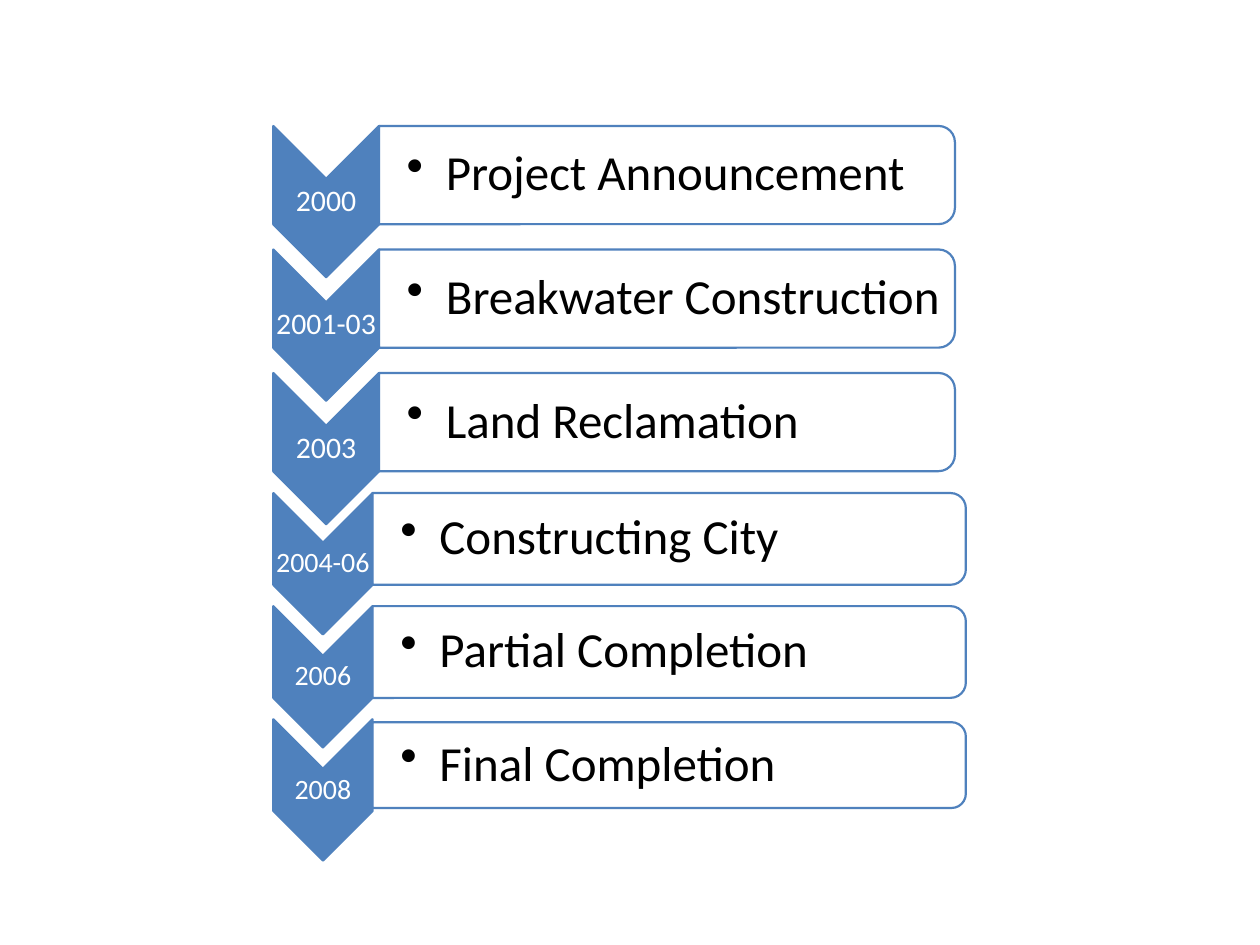
from lxml import etree
from pptx import Presentation
from pptx.dml.color import RGBColor
from pptx.enum import shapes, text
from pptx.oxml import ns
from pptx.util import Cm, Pt

BLUE, WHITE, BLACK = "4F81BD", "FFFFFF", "000000"
FONT = "Calibri"
LEFT = 5.51

# Lengths in cm, year size in points; each step is (year, label, bar height)
TIMELINES = [
    dict(top=2.54, pitch=2.49, arrow=(2.13, 3.05), bar_width=11.61, band=1.98, year_size=17,
         steps=[("2000", "Project Announcement", 1.98),
                ("2001-03", "Breakwater Construction", 1.98),
                ("2003", "Land Reclamation", 1.98)]),
    dict(top=9.94, pitch=2.28, arrow=(2.0, 2.85), bar_width=11.96, band=1.85, year_size=16,
         steps=[("2004-06", "Constructing City", 1.85),
                ("2006", "Partial Completion", 1.85),
                ("2008", "Final Completion", 1.73)]),
]


def rgb(value):
    return RGBColor.from_string(value)


def add_turned_shape(group, kind, left, top, width, height, fill):
    """Add a shape turned a quarter clockwise; the frame given is the one it shows."""
    shape = group.shapes.add_shape(
        kind, Cm(left + (width - height) / 2), Cm(top + (height - width) / 2),
        Cm(height), Cm(width))
    shape.rotation = 90
    shape.shadow.inherit = False
    shape.fill.solid()
    shape.fill.fore_color.rgb = rgb(fill)
    shape.line.color.rgb = rgb(BLUE)
    shape.line.width = Pt(1.25)
    return shape


def set_opacity(shape, percent):
    color = shape._element.spPr.find(ns.qn("a:solidFill"))[0]
    etree.SubElement(color, ns.qn("a:alpha"), val=str(percent * 1000))


def add_bullet(para, indent):
    props = para._p.get_or_add_pPr()
    props.set("marL", str(Cm(indent)))
    props.set("indent", str(-Cm(indent)))
    etree.SubElement(props, ns.qn("a:buChar"), char="•")


def add_text(group, words, frame, inset, left_inset, size, color, bulleted=False):
    box = group.shapes.add_textbox(*map(Cm, frame))
    body = box.text_frame
    body.word_wrap = True
    body.vertical_anchor = text.MSO_ANCHOR.MIDDLE
    body.margin_top = body.margin_right = body.margin_bottom = Cm(inset)
    body.margin_left = Cm(left_inset)
    body.text = words
    para = body.paragraphs[0]
    para.line_spacing = 0.9
    if bulleted:
        add_bullet(para, 0.79)
    else:
        para.alignment = text.PP_ALIGN.CENTER
    font = para.runs[0].font
    font.name, font.size, font.color.rgb = FONT, Pt(size), rgb(color)


def add_timeline(page, timeline):
    group = page.shapes.add_group_shape()
    arrow_width, arrow_height = timeline["arrow"]
    bar_left, bar_width = LEFT + arrow_width, timeline["bar_width"]
    for index, (year, label, bar_height) in enumerate(timeline["steps"]):
        top = timeline["top"] + index * timeline["pitch"]
        add_turned_shape(group, shapes.MSO_SHAPE.CHEVRON, LEFT, top,
                         arrow_width, arrow_height, BLUE)
        year_frame = (LEFT, top + arrow_width / 2, arrow_width, arrow_height - arrow_width)
        add_text(group, year, year_frame, 0.03, 0.03, timeline["year_size"], WHITE)

        bar_top = top + (timeline["band"] - bar_height) / 2
        bar = add_turned_shape(group, shapes.MSO_SHAPE.ROUND_2_SAME_RECTANGLE, bar_left,
                               bar_top, bar_width, bar_height, WHITE)
        set_opacity(bar, 90)
        label_frame = (bar_left, bar_top + 0.09, bar_width - 0.08, bar_height - 0.18)
        add_text(group, label, label_frame, 0.05, 0.56, 28, BLACK, bulleted=True)


def main():
    deck = Presentation()
    deck.slide_width, deck.slide_height = Cm(25.4), Cm(19.05)
    page = deck.slides.add_slide(deck.slide_layouts.get_by_name("Blank"))
    for timeline in TIMELINES:
        add_timeline(page, timeline)
    deck.save("out.pptx")


if __name__ == "__main__":
    main()
